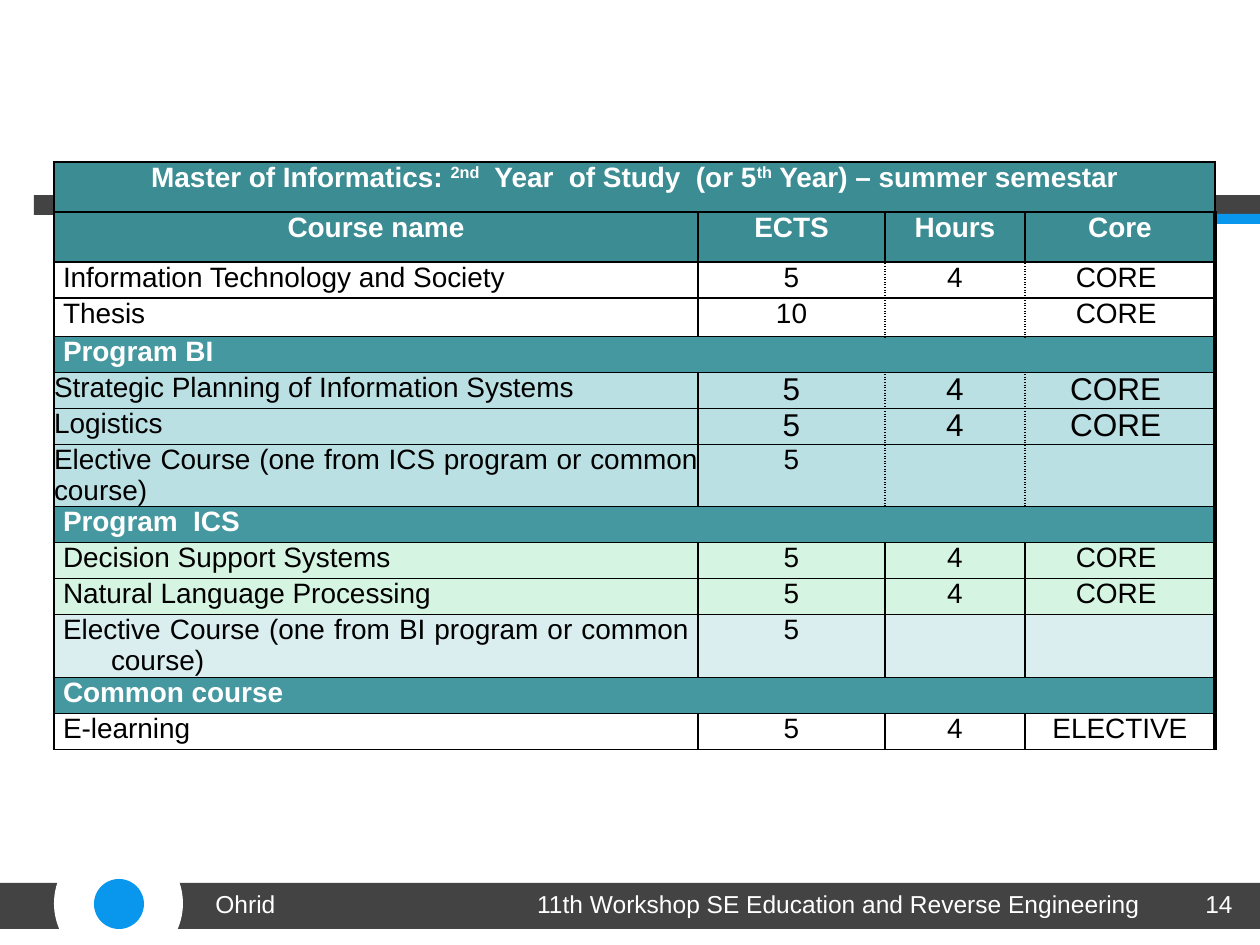
from dataclasses import dataclass
from typing import NamedTuple

from lxml.etree import SubElement
from pptx import Presentation
from pptx.dml.color import RGBColor
from pptx.enum.shapes import MSO_SHAPE
from pptx.enum.text import PP_ALIGN
from pptx.oxml.ns import qn
from pptx.util import Emu, Pt

EMU_PER_PX = 914400 / 126


@dataclass(frozen=True)
class Theme:
    font: str = "Arial"
    white: str = "FFFFFF"
    black: str = "000000"
    dark: str = "434343"
    blue: str = "0996ED"
    header: str = "3C8C93"
    section: str = "4597A0"
    business: str = "BBE0E3"
    science: str = "D6F4E2"
    elective: str = "DAEDEF"
    footer_size: int = 14
    table_size: int = 16
    large_size: int = 18
    thin: float = 1
    medium: float = 1.5
    thick: float = 2.25


THEME = Theme()


class Box(NamedTuple):
    left: int
    top: int
    width: int
    height: int


class Decoration(NamedTuple):
    kind: MSO_SHAPE
    box: Box
    color: str


class FooterText(NamedTuple):
    text: str
    box: Box
    align: PP_ALIGN


@dataclass(frozen=True)
class Row:
    texts: tuple[str, ...]
    fill: str
    height: int = 36
    bold: bool = False
    dotted: bool = False
    margin: int = 9
    hanging: int = 0
    value_size: int = THEME.table_size

    @property
    def merged(self) -> bool:
        return len(self.texts) == 1


DECORATIONS = [
    Decoration(MSO_SHAPE.RECTANGLE, Box(174, 883, 1086, 46), THEME.dark),
    Decoration(MSO_SHAPE.RECTANGLE, Box(0, 883, 64, 46), THEME.dark),
    Decoration(MSO_SHAPE.OVAL, Box(54, 839, 129, 129), THEME.white),
    Decoration(MSO_SHAPE.OVAL, Box(94, 879, 50, 50), THEME.blue),
    Decoration(MSO_SHAPE.RECTANGLE, Box(34, 195, 1226, 20), THEME.dark),
    Decoration(MSO_SHAPE.RECTANGLE, Box(54, 214, 1206, 10), THEME.blue),
]

FOOTER = [
    FooterText("14", Box(1176, 883, 69, 65), PP_ALIGN.RIGHT),
    FooterText("Ohrid", Box(203, 883, 348, 65), PP_ALIGN.LEFT),
    FooterText("11th Workshop SE Education and Reverse Engineering",
               Box(501, 883, 675, 65), PP_ALIGN.CENTER),
]

TITLE_SPANS = [
    ("Master of Informatics: ", False),
    ("2nd", True),
    ("  Year  of Study  (or 5", False),
    ("th", True),
    (" Year) – summer semestar", False),
]

TABLE_LEFT, TABLE_TOP = 54, 162
COLUMN_WIDTHS = [644, 187, 140, 190]
HEADER_ROW = 1
HANGING = 48


def section(text: str) -> Row:
    return Row((text,), THEME.section, bold=True)


def core_course(name: str, ects: str, hours: str) -> Row:
    return Row((name, ects, hours, "CORE "), THEME.white, dotted=True)


def business_course(name: str) -> Row:
    return Row((name, "5", "4", "CORE "), THEME.business, dotted=True,
               margin=0, value_size=THEME.large_size)


def science_course(name: str) -> Row:
    return Row((name, "5", "4", "CORE "), THEME.science, hanging=HANGING)


ROWS = [
    Row(("",), THEME.header, height=50, bold=True),
    Row(("Course name", "ECTS", "Hours", "Core"), THEME.header, height=50, bold=True),
    core_course("Information Technology and Society", "5", "4"),
    core_course("Thesis", "10", ""),
    section("Program BI"),
    business_course("Strategic Planning of Information Systems"),
    business_course("Logistics"),
    Row(("Elective Course (one from ICS program or common course)", "5", "", ""),
        THEME.business, height=62, dotted=True, margin=0),
    section("Program  ICS"),
    science_course("Decision Support Systems"),
    science_course("Natural Language Processing"),
    Row(("Elective Course (one from BI program or common course)", "5", "", ""),
        THEME.elective, height=63, hanging=HANGING),
    section("Common course"),
    Row(("E-learning", "5", "4", "ELECTIVE"), THEME.white, hanging=HANGING),
]


def px(value: int) -> Emu:
    return Emu(round(value * EMU_PER_PX))


def place(box: Box) -> list[Emu]:
    return [px(value) for value in box]


def style_runs(para, size: int, color: str, bold: bool = False) -> None:
    for span in para.runs:
        span.font.name = THEME.font
        span.font.size = Pt(size)
        span.font.bold = bold
        span.font.color.rgb = RGBColor.from_string(color)


def draw_decoration(page, item: Decoration) -> None:
    shape = page.shapes.add_shape(item.kind, *place(item.box))
    shape.shadow.inherit = False
    shape.fill.solid()
    shape.fill.fore_color.rgb = RGBColor.from_string(item.color)
    shape.line.fill.background()


def draw_footer(page, item: FooterText) -> None:
    frame = page.shapes.add_textbox(*place(item.box)).text_frame
    frame.word_wrap = True
    frame.text = item.text
    frame.paragraphs[0].alignment = item.align
    style_runs(frame.paragraphs[0], THEME.footer_size, THEME.white)


def set_borders(cell, row_index: int, column: int) -> None:
    """Dotted lines part the value columns; the right edge and header base are heavier."""
    row = ROWS[row_index]
    last = row.merged or column == len(COLUMN_WIDTHS) - 1
    right = THEME.thick if last and row_index else THEME.thin
    top = THEME.medium if row_index == HEADER_ROW + 1 else THEME.thin
    bottom = THEME.medium if row_index == HEADER_ROW else THEME.thin
    edges = [
        ("a:lnL", THEME.thin, row.dotted and column > 1),
        ("a:lnR", right, row.dotted and column > 0 and not last),
        ("a:lnT", top, False),
        ("a:lnB", bottom, False),
    ]
    properties = cell._tc.get_or_add_tcPr()
    for position, (tag, width, dotted) in enumerate(edges):
        line = SubElement(properties, qn(tag), w=str(Pt(width)))
        fill = SubElement(line, qn("a:solidFill"))
        SubElement(fill, qn("a:srgbClr"), val=THEME.black)
        SubElement(line, qn("a:prstDash"), val="sysDot" if dotted else "solid")
        properties.insert(position, line)


def fill_cell(cell, row_index: int, column: int) -> None:
    row = ROWS[row_index]
    cell.margin_left = cell.margin_right = px(row.margin)
    cell.margin_top = cell.margin_bottom = 0
    cell.fill.solid()
    cell.fill.fore_color.rgb = RGBColor.from_string(row.fill)
    set_borders(cell, row_index, column)
    if column >= len(row.texts):
        return
    para = cell.text_frame.paragraphs[0]
    if row_index == 0:
        for text, raised in TITLE_SPANS:
            span = para.add_run()
            span.text = text
            if raised:
                span._r.get_or_add_rPr().set("baseline", "30000")
    elif row.texts[column]:
        para.text = row.texts[column]
    centered = column > 0 or row_index <= HEADER_ROW
    para.alignment = PP_ALIGN.CENTER if centered else PP_ALIGN.JUSTIFY
    if row.hanging and column == 0:
        properties = para._p.get_or_add_pPr()
        properties.set("marL", str(px(row.hanging)))
        properties.set("indent", str(-px(row.hanging)))
    size = row.value_size if column else THEME.table_size
    style_runs(para, size, THEME.white if row.bold else THEME.black, row.bold)


def draw_table(page) -> None:
    box = Box(TABLE_LEFT, TABLE_TOP, sum(COLUMN_WIDTHS), sum(row.height for row in ROWS))
    table = page.shapes.add_table(len(ROWS), len(COLUMN_WIDTHS), *place(box)).table
    table.first_row = table.horz_banding = False
    for column, width in enumerate(COLUMN_WIDTHS):
        table.columns[column].width = px(width)
    for index, row in enumerate(ROWS):
        table.rows[index].height = px(row.height)
        if row.merged:
            table.cell(index, 0).merge(table.cell(index, len(COLUMN_WIDTHS) - 1))
        for column in range(len(COLUMN_WIDTHS)):
            fill_cell(table.cell(index, column), index, column)


def main() -> None:
    deck = Presentation()
    deck.slide_width, deck.slide_height = px(1260), px(945)
    page = deck.slides.add_slide(deck.slide_layouts[6])
    for decoration in DECORATIONS:
        draw_decoration(page, decoration)
    draw_table(page)
    for item in FOOTER:
        draw_footer(page, item)
    deck.save("out.pptx")


if __name__ == "__main__":
    main()
